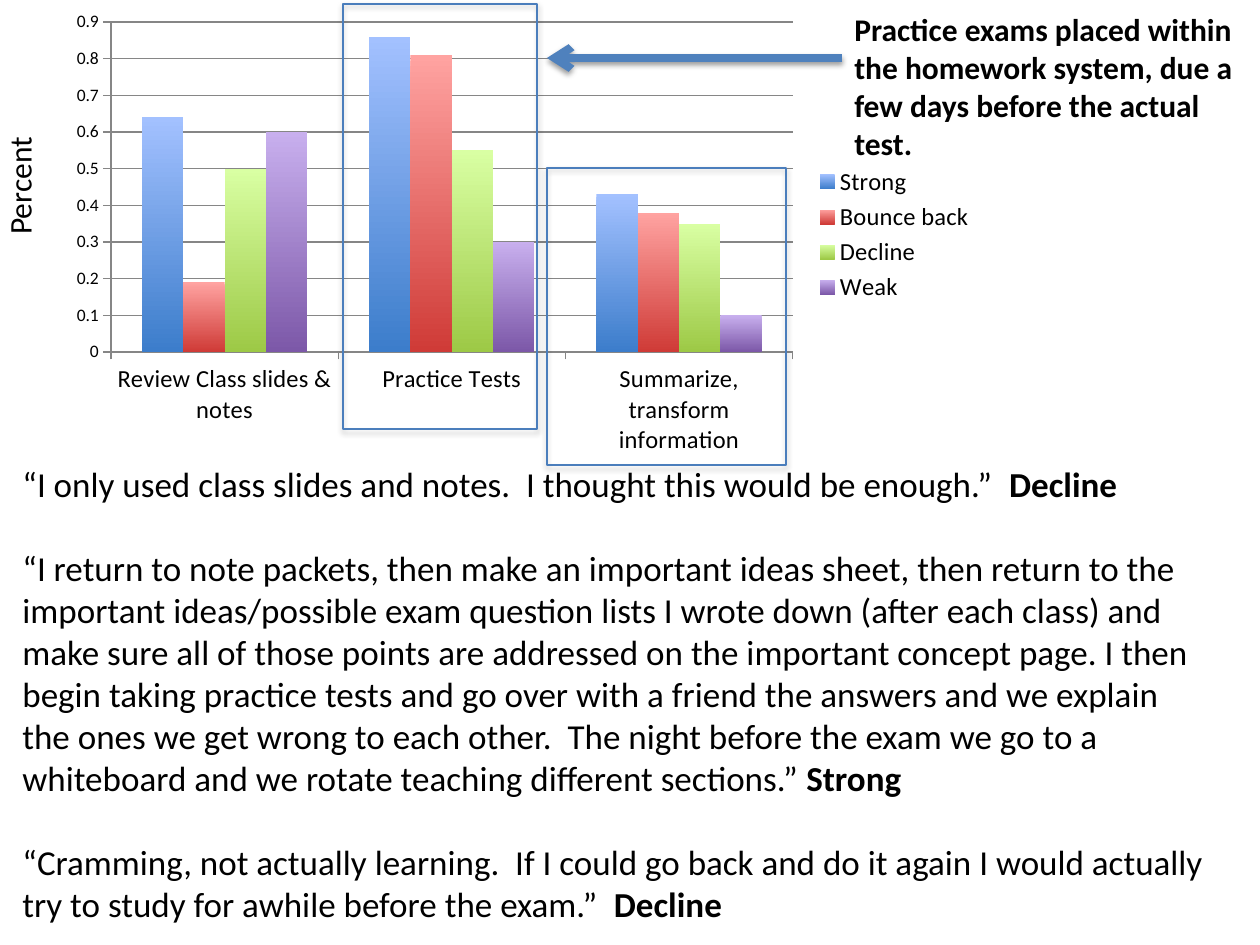
import pptx
import pptx.chart.data
import pptx.dml.color
import pptx.enum.chart
import pptx.enum.shapes
import pptx.enum.text
import pptx.oxml
import pptx.oxml.ns
import pptx.util

RGBColor = pptx.dml.color.RGBColor
BLACK = RGBColor(0x00, 0x00, 0x00)
GRAY = RGBColor(0x86, 0x86, 0x86)
EDGE = RGBColor(0x4B, 0x7E, 0xBC)
BLUE = RGBColor(0x4F, 0x81, 0xBD)

FONT = "Calibri"
SCALE = 914400 // 126  # EMU in one px
NS = pptx.oxml.ns.nsdecls("a", "c")

CATS = ["Review Class slides & notes", "Practice Tests",
        "Summarize, transform information"]
# name, values, top and bottom colour of the bars
SERIES = [
    ("Strong", (0.64, 0.86, 0.43),
     RGBColor(0xA3, 0xC1, 0xFF), RGBColor(0x3C, 0x7D, 0xCB)),
    ("Bounce back", (0.19, 0.81, 0.38),
     RGBColor(0xFF, 0xA3, 0xA1), RGBColor(0xCF, 0x3B, 0x37)),
    ("Decline", (0.5, 0.55, 0.35),
     RGBColor(0xD9, 0xFF, 0xA3), RGBColor(0x9D, 0xC9, 0x46)),
    ("Weak", (0.6, 0.3, 0.1),
     RGBColor(0xC8, 0xAF, 0xEE), RGBColor(0x7C, 0x58, 0xA8)),
]
QUOTES = [
    ("“I only used class slides and notes.  I thought this would be "
     "enough.”  ", "Decline"),
    ("“I return to note packets, then make an important ideas sheet, then "
     "return to the important ideas/possible exam question lists I wrote "
     "down (after each class) and make sure all of those points are "
     "addressed on the important concept page. I then begin taking practice "
     "tests and go over with a friend the answers and we explain the ones "
     "we get wrong to each other.  The night before the exam we go to a "
     "whiteboard and we rotate teaching different sections.” ", "Strong"),
    ("“Cramming, not actually learning.  If I could go back and do it again "
     "I would actually try to study for awhile before the exam.”  ",
     "Decline"),
]
NOTE = ("Practice exams placed within the homework system, due a few days "
        "before the actual test.")


def px(*nums):
    return [pptx.util.Emu(n * SCALE) for n in nums]


def style(font, size, bold=False):
    font.name = FONT
    font.size = pptx.util.Pt(size)
    font.bold = bold
    font.color.rgb = BLACK


def add_text(slide, box, paras, size, wrap=True, gap=0):
    """Place a text box; each paragraph is a list of (text, bold) runs."""
    shape = slide.shapes.add_textbox(*px(*box))
    frame = shape.text_frame
    frame.word_wrap = wrap
    frame.auto_size = pptx.enum.text.MSO_AUTO_SIZE.SHAPE_TO_FIT_TEXT
    for i, runs in enumerate(paras):
        para = frame.add_paragraph() if i else frame.paragraphs[0]
        para.space_before = pptx.util.Pt(gap if i else 0)
        for text, bold in runs:
            run = para.add_run()
            run.text = text
            style(run.font, size, bold)
    return shape


def add_shadow(item, alpha, dist):
    item._element.spPr.append(pptx.oxml.parse_xml(
        f'<a:effectLst {NS}><a:outerShdw blurRad="40000" dist="{dist}" '
        'dir="5400000" rotWithShape="0"><a:srgbClr val="000000">'
        f'<a:alpha val="{alpha * 1000}"/></a:srgbClr>'
        '</a:outerShdw></a:effectLst>'))


def set_plot(chart, box, plot):
    """Fix the inner plot area, given in px from the chart's corner."""
    _, _, wide, high = box
    x, y, w, h = plot
    parts = zip("xywh", (x / wide, y / high, w / wide, h / high))
    sizes = "".join(f'<c:{k} val="{v:.3f}"/>' for k, v in parts)
    area = chart._chartSpace.chart.plotArea
    for old in area.findall(pptx.oxml.ns.qn("c:layout")):
        area.remove(old)
    area.insert(0, pptx.oxml.parse_xml(
        f'<c:layout {NS}><c:manualLayout><c:layoutTarget val="inner"/>'
        '<c:xMode val="edge"/><c:yMode val="edge"/>'
        f'{sizes.replace("c:x ", "c:x ")}</c:manualLayout></c:layout>'))


def add_bars(slide, box):
    data = pptx.chart.data.CategoryChartData()
    data.categories = CATS
    for name, vals, _, _ in SERIES:
        data.add_series(name, vals)
    kind = pptx.enum.chart.XL_CHART_TYPE.COLUMN_CLUSTERED
    chart = slide.shapes.add_chart(kind, *px(*box), data).chart
    style(chart.font, 10)
    chart.has_title = False
    set_plot(chart, box, (53, 18, 682, 330))

    # Legend
    chart.has_legend = True
    chart.legend.position = pptx.enum.chart.XL_LEGEND_POSITION.RIGHT
    chart.legend.include_in_layout = False
    style(chart.legend.font, 14)

    # Axes
    axis = chart.value_axis
    axis.minimum_scale, axis.maximum_scale, axis.major_unit = 0, 0.9, 0.1
    axis.has_major_gridlines = True
    style(axis.tick_labels.font, 10)
    style(chart.category_axis.tick_labels.font, 14)
    lines = [axis.major_gridlines]
    for side in (axis, chart.category_axis):
        side.major_tick_mark = pptx.enum.chart.XL_TICK_MARK.OUTSIDE
        lines.append(side)
    for part in lines:
        part.format.line.color.rgb = GRAY
        part.format.line.width = pptx.util.Pt(0.75)

    # Bars
    plot = chart.plots[0]
    plot.gap_width = 150
    plot.overlap = 0
    plot.vary_by_categories = False
    for bars, (_, _, top, base) in zip(plot.series, SERIES):
        fill = bars.format.fill
        fill.gradient()
        fill.gradient_angle = 270
        for stop, color in zip(fill.gradient_stops, (top, base)):
            stop.color.rgb = color


def add_frame(slide, box):
    kind = pptx.enum.shapes.MSO_SHAPE.RECTANGLE
    shape = slide.shapes.add_shape(kind, *px(*box))
    shape.fill.background()
    shape.line.color.rgb = EDGE
    shape.line.width = pptx.util.Pt(0.75)
    add_shadow(shape, 35, 23000)


def add_arrow(slide, ends):
    kind = pptx.enum.shapes.MSO_CONNECTOR.STRAIGHT
    arrow = slide.shapes.add_connector(kind, *px(*ends))
    arrow.line.color.rgb = BLUE
    arrow.line.width = pptx.util.Pt(4.5)
    arrow.line._get_or_add_ln().append(
        pptx.oxml.parse_xml(f'<a:tailEnd {NS} type="arrow"/>'))
    add_shadow(arrow, 38, 20000)


def main():
    deck = pptx.Presentation()
    deck.slide_width, deck.slide_height = px(1260, 945)
    slide = deck.slides.add_slide(deck.slide_layouts[6])

    # Axis title and quotes
    title = add_text(slide, (-44, 159, 126, 50), [[("Percent", False)]],
                     18, wrap=False)
    title.rotation = 270
    quotes = [[(text, False), (group, True)] for text, group in QUOTES]
    add_text(slide, (10, 456, 1210, 479), quotes, 20, gap=24)

    # Chart with its callout and frames
    add_bars(slide, (58, 4, 929, 461))
    add_text(slide, (842, 4, 414, 165), [[(NOTE, True)]], 18)
    add_frame(slide, (547, 168, 239, 297))
    add_arrow(slide, (842, 58, 547, 58))
    add_frame(slide, (343, 4, 194, 425))

    deck.save("out.pptx")


if __name__ == "__main__":
    main()
